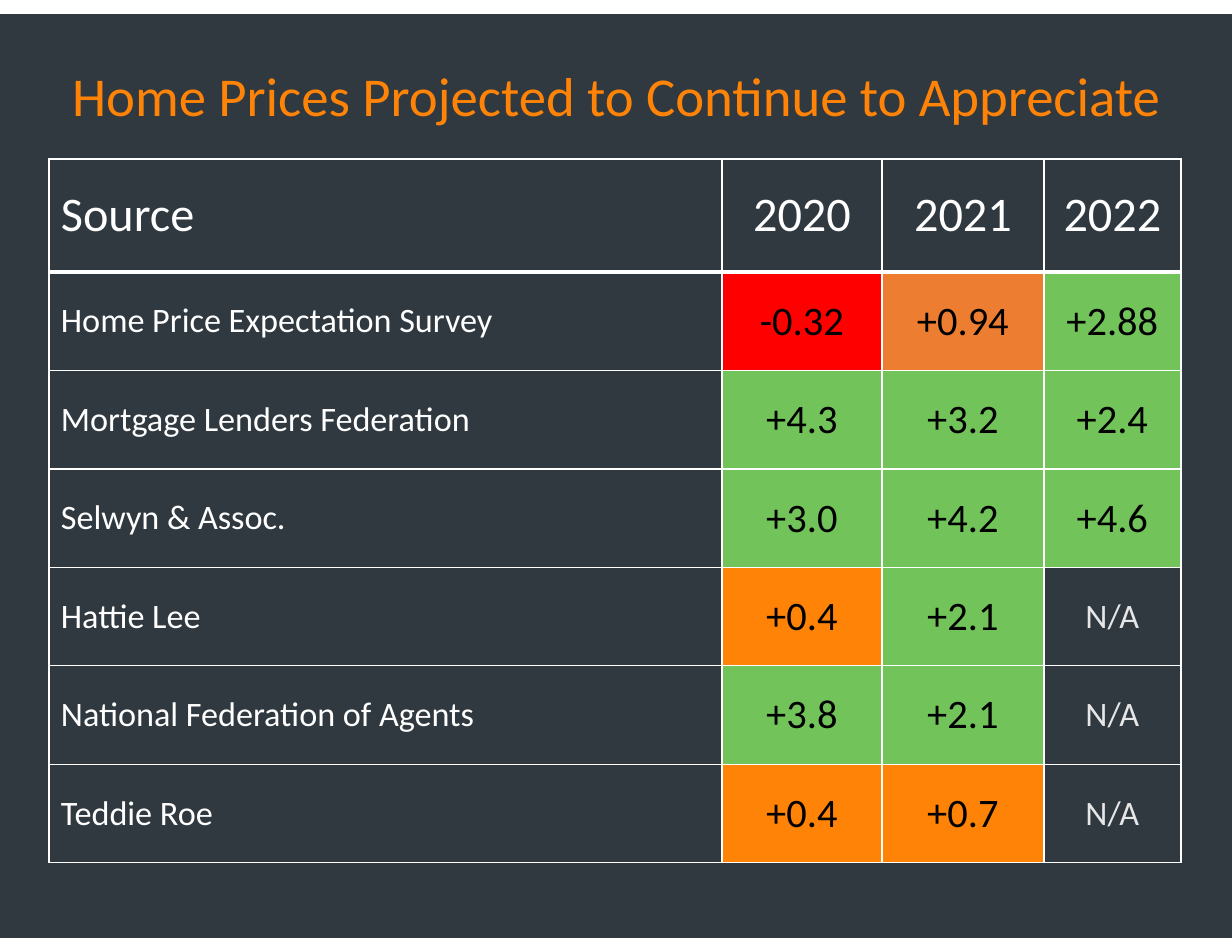
from dataclasses import dataclass

from lxml import etree
from pptx import Presentation
from pptx import util as u
from pptx.dml.color import RGBColor
from pptx.enum import shapes, text
from pptx.oxml.ns import qn

PX_PER_INCH = 112


def px(length):
    return u.Emu(round(length * 914400 / PX_PER_INCH))


@dataclass(frozen=True)
class Theme:
    font: str = "Calibri"
    slate: str = "2F393F"
    white: str = "FFFFFF"
    black: str = "000000"
    grey: str = "E7E6E6"
    orange: str = "FF8306"
    amber: str = "ED7D31"
    red: str = "FF0000"
    green: str = "72C45A"
    title_size: float = 35.2
    header_size: int = 31
    value_size: int = 26
    label_size: int = 22
    thin: int = 1
    thick: int = 3


class SlideBuilder:
    def __init__(self, deck, theme):
        self.theme = theme
        self.page = deck.slides.add_slide(deck.slide_layouts[6])

    def set_text(self, frame, words, size, color, align):
        frame.text = words
        para = frame.paragraphs[0]
        para.alignment = align
        font = para.runs[0].font
        font.name, font.size = self.theme.font, u.Pt(size)
        font.color.rgb = RGBColor.from_string(color)

    def panel(self, left, top, width, height, color):
        box = self.page.shapes.add_shape(
            shapes.MSO_SHAPE.RECTANGLE, px(left), px(top), px(width), px(height))
        box.shadow.inherit = False
        box.fill.solid()
        box.fill.fore_color.rgb = RGBColor.from_string(color)
        box.line.fill.background()

    def title(self, left, top, width, height, words):
        box = self.page.shapes.add_textbox(px(left), px(top), px(width), px(height))
        frame = box.text_frame
        frame.word_wrap = True
        frame.auto_size = text.MSO_AUTO_SIZE.SHAPE_TO_FIT_TEXT
        self.set_text(frame, words, self.theme.title_size, self.theme.orange,
                      text.PP_ALIGN.CENTER)

    def borders(self, cell, top, bottom):
        properties = cell._tc.get_or_add_tcPr()
        widths = {"L": self.theme.thin, "R": self.theme.thin, "T": top, "B": bottom}
        # Border lines come before the fill in a cell's properties
        for index, (side, width) in enumerate(widths.items()):
            line = etree.Element(qn(f"a:ln{side}"), w=str(int(u.Pt(width))))
            fill = etree.SubElement(line, qn("a:solidFill"))
            etree.SubElement(fill, qn("a:srgbClr"), val=self.theme.white)
            properties.insert(index, line)

    def cell(self, cell, words, size, color, fill, align):
        self.set_text(cell.text_frame, words, size, color, align)
        cell.vertical_anchor = text.MSO_ANCHOR.MIDDLE
        cell.margin_left = cell.margin_right = px(12)
        cell.margin_top = cell.margin_bottom = px(7)
        if fill:
            cell.fill.solid()
            cell.fill.fore_color.rgb = RGBColor.from_string(fill)
        else:
            cell.fill.background()

    def table(self, left, top, height, widths, header_height, header, rows):
        theme = self.theme
        grid = self.page.shapes.add_table(
            len(rows) + 1, len(widths), px(left), px(top),
            px(sum(widths)), px(height)).table
        for column, width in zip(grid.columns, widths):
            column.width = px(width)
        for row in grid.rows:
            row.height = px((height - header_height) / len(rows))
        grid.rows[0].height = px(header_height)

        for r, values in enumerate([header, *rows]):
            for c, value in enumerate(values):
                align = text.PP_ALIGN.CENTER if c else text.PP_ALIGN.LEFT
                if r == 0:
                    look = value, theme.header_size, theme.white, theme.slate
                elif c == 0:
                    look = value, theme.label_size, theme.white, theme.slate
                elif value is None:
                    look = "N/A", theme.label_size, theme.grey, None
                else:
                    words, fill = value
                    look = words, theme.value_size, theme.black, fill
                cell = grid.cell(r, c)
                self.cell(cell, *look, align)
                self.borders(cell,
                             top=theme.thick if r == 1 else theme.thin,
                             bottom=theme.thick if r == 0 else theme.thin)


def main():
    theme = Theme()
    deck = Presentation()
    deck.slide_width, deck.slide_height = px(1232), px(952)
    slide = SlideBuilder(deck, theme)

    # Dark backdrop
    slide.panel(0, 14, 1232, 924, theme.slate)

    # Forecast table: each value with its rating colour, None where not available
    green, orange = theme.green, theme.orange
    forecasts = [
        ("Home Price Expectation Survey",
         ("-0.32", theme.red), ("+0.94", theme.amber), ("+2.88", green)),
        ("Mortgage Lenders Federation",
         ("+4.3", green), ("+3.2", green), ("+2.4", green)),
        ("Selwyn & Assoc.", ("+3.0", green), ("+4.2", green), ("+4.6", green)),
        ("Hattie Lee", ("+0.4", orange), ("+2.1", green), None),
        ("National Federation of Agents", ("+3.8", green), ("+2.1", green), None),
        ("Teddie Roe", ("+0.4", orange), ("+0.7", orange), None),
    ]
    slide.table(49, 159, 704, [673, 160, 162, 137], 113,
                ["Source", "2020", "2021", "2022"], forecasts)

    # Title
    slide.title(0, 56, 1232, 77, "Home Prices Projected to Continue to Appreciate")

    deck.save("out.pptx")


if __name__ == "__main__":
    main()
